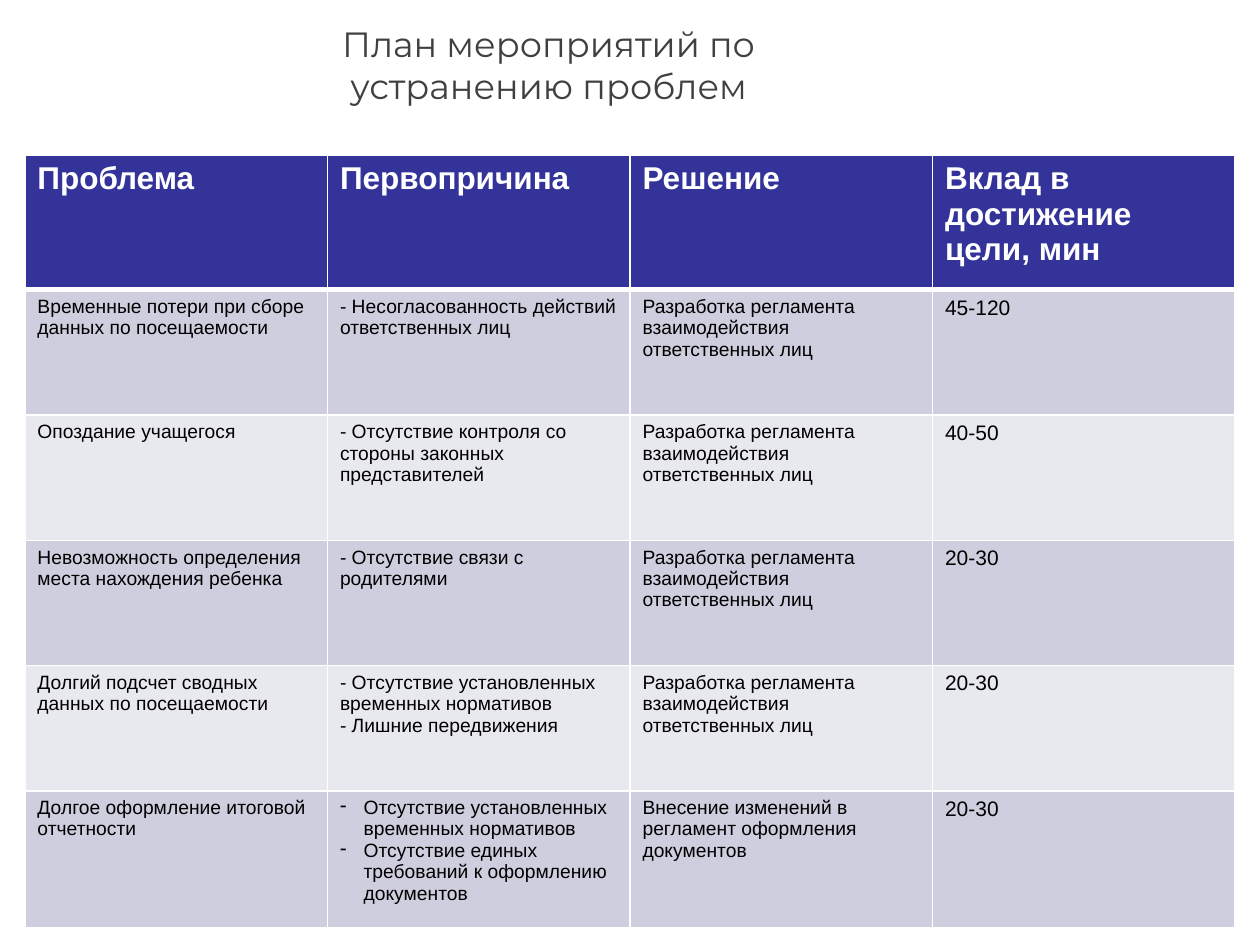
import pptx
import pptx.dml.color
import pptx.enum.text
import pptx.oxml.ns
import pptx.util
from lxml import etree

Pt = pptx.util.Pt
RGBColor = pptx.dml.color.RGBColor

WHITE = RGBColor(0xFF, 0xFF, 0xFF)
BLACK = RGBColor(0, 0, 0)
TITLE_GRAY = RGBColor(0x40, 0x40, 0x40)
HEADER_BLUE = RGBColor(0x33, 0x33, 0x99)
BANDS = (RGBColor(0xCE, 0xCE, 0xDE), RGBColor(0xE8, 0xE8, 0xEF))

TITLE = "План мероприятий по\vустранению проблем"
HEADERS = ["Проблема", "Первопричина", "Решение", "Вклад в достижение цели, мин"]
REGULATION = "Разработка регламента взаимодействия ответственных лиц"
MEASURES = [
    ["Временные потери при сборе данных по посещаемости",
     "- Несогласованность действий ответственных лиц", REGULATION, "45-120"],
    ["Опоздание учащегося",
     "- Отсутствие контроля со стороны законных представителей", REGULATION, "40-50"],
    ["Невозможность определения места нахождения ребенка",
     "- Отсутствие связи с родителями", REGULATION, "20-30"],
    ["Долгий подсчет сводных данных по посещаемости",
     "- Отсутствие установленных временных нормативов\n- Лишние передвижения",
     REGULATION, "20-30"],
    ["Долгое оформление итоговой отчетности",
     "Отсутствие установленных временных нормативов\n"
     "Отсутствие единых требований к оформлению документов",
     "Внесение изменений в регламент оформления документов", "20-30"],
]
BULLETED_CELL = (len(MEASURES), 1)
ROW_HEIGHTS = [77, 71.6, 71.6, 71.6, 71.6, 78.4]


def set_font(paragraph, name, size, color, bold=False):
    font = paragraph.font
    font.name = name
    font.size = Pt(size)
    font.bold = bold
    font.color.rgb = color


def add_dash(paragraph):
    properties = paragraph._p.get_or_add_pPr()
    properties.set("marL", str(Pt(13.5)))
    properties.set("indent", str(-Pt(13.5)))
    bullet = etree.SubElement(properties, pptx.oxml.ns.qn("a:buChar"))
    bullet.set("char", "-")


def set_borders(cell, top, bottom):
    qn = pptx.oxml.ns.qn
    properties = cell._tc.get_or_add_tcPr()
    for side, width in (("L", 1), ("R", 1), ("T", top), ("B", bottom)):
        line = etree.SubElement(properties, qn(f"a:ln{side}"), w=str(Pt(width)))
        fill = etree.SubElement(line, qn("a:solidFill"))
        etree.SubElement(fill, qn("a:srgbClr"), val=str(WHITE))


def place_title(slide, left, top, width, height):
    title = slide.shapes.title
    title.left, title.top, title.width, title.height = left, top, width, height
    frame = title.text_frame
    frame.text = TITLE
    frame.word_wrap = False
    frame.auto_size = pptx.enum.text.MSO_AUTO_SIZE.SHAPE_TO_FIT_TEXT
    frame.vertical_anchor = pptx.enum.text.MSO_ANCHOR.MIDDLE
    heading = frame.paragraphs[0]
    heading.alignment = pptx.enum.text.PP_ALIGN.CENTER
    set_font(heading, "Montserrat", 20, TITLE_GRAY)


def place_measures(slide, left, top, width, height):
    rows = [HEADERS] + MEASURES
    table = slide.shapes.add_table(
        len(rows), len(HEADERS), left, top, width, height).table
    for column in table.columns:
        column.width = width // len(HEADERS)
    for row, row_height in zip(table.rows, ROW_HEIGHTS):
        row.height = Pt(row_height)

    for r, texts in enumerate(rows):
        is_header = r == 0
        for c, text in enumerate(texts):
            cell = table.cell(r, c)
            set_borders(cell, 3 if r == 1 else 1, 3 if is_header else 1)
            cell.fill.solid()
            cell.fill.fore_color.rgb = HEADER_BLUE if is_header else BANDS[(r - 1) % 2]
            cell.text = text
            for paragraph in cell.text_frame.paragraphs:
                paragraph.alignment = pptx.enum.text.PP_ALIGN.LEFT
                if (r, c) == BULLETED_CELL:
                    add_dash(paragraph)
                if is_header:
                    set_font(paragraph, "Arial", 18, WHITE, bold=True)
                else:
                    is_minutes = c == len(HEADERS) - 1
                    set_font(paragraph, "Arial", 12 if is_minutes else 11, BLACK)


def main():
    presentation = pptx.Presentation()
    presentation.slide_width, presentation.slide_height = Pt(720), Pt(540)
    slide = presentation.slides.add_slide(presentation.slide_layouts[5])
    place_title(slide, Pt(93.6), Pt(9.4), Pt(440), Pt(55.4))
    place_measures(slide, Pt(14.2), Pt(88.6), Pt(691.6), Pt(sum(ROW_HEIGHTS)))
    presentation.save("out.pptx")


if __name__ == "__main__":
    main()
